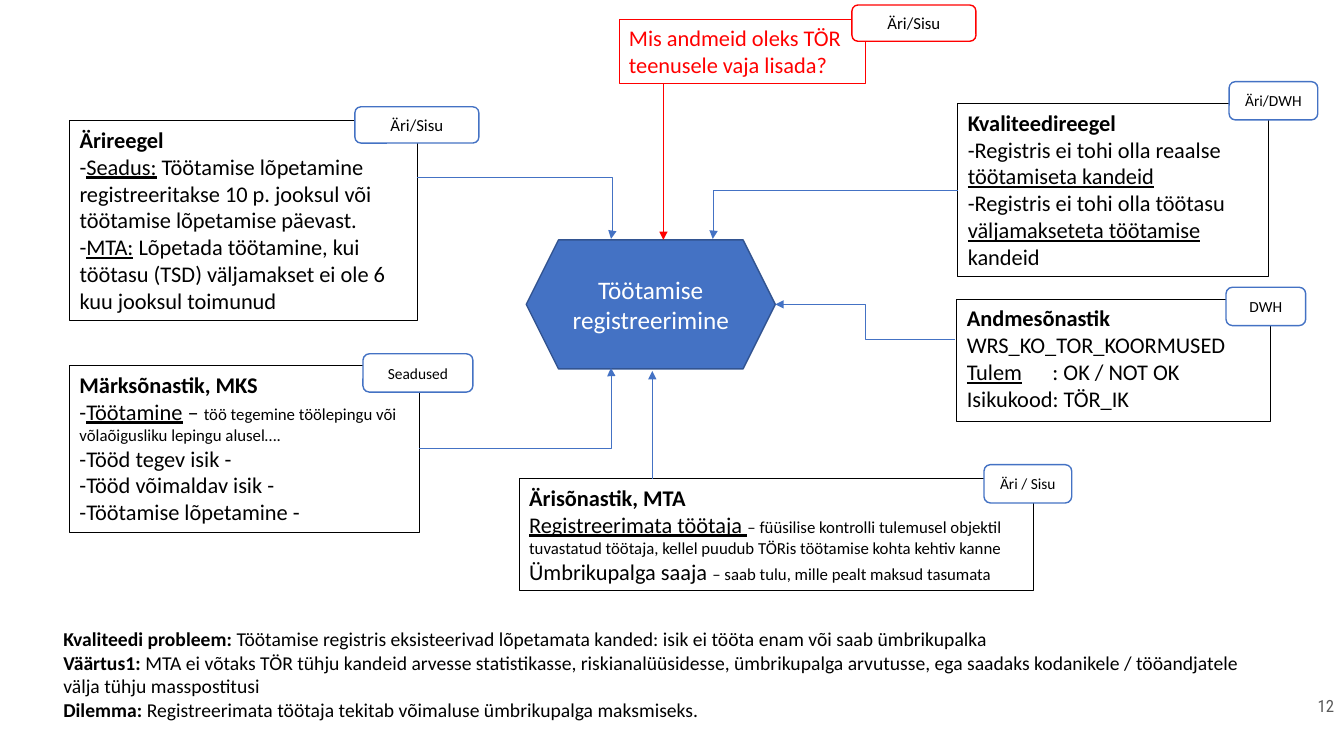
from lxml.etree import SubElement
from pptx import Presentation
from pptx.dml.color import RGBColor
from pptx.enum.shapes import MSO_CONNECTOR as CONNECTOR, MSO_SHAPE as SHAPE
from pptx.enum.text import MSO_ANCHOR as ANCHOR, MSO_AUTO_SIZE as AUTO_SIZE, PP_ALIGN as ALIGN
from pptx.oxml.ns import qn
from pptx.util import Pt

PX = 9144  # 100 px to the inch
COLORS = {name: RGBColor.from_string(value) for name, value in {
    "black": "000000", "white": "FFFFFF", "red": "FF0000",
    "blue": "4472C4", "dark_blue": "325491", "gray": "595959",
}.items()}
TAB_STOP = 85
SMALL = 12

presentation = Presentation()
presentation.slide_width = 1333 * PX
presentation.slide_height = 750 * PX
slide = presentation.slides.add_slide(presentation.slide_layouts[6])


def write(shape, paragraphs, size, color, align=ALIGN.LEFT, font_name="Calibri"):
    """Fill a shape with paragraphs, each a list of (text, style) runs.

    Style letters: b is bold, u is underlined, s is small.
    """
    frame = shape.text_frame
    frame.word_wrap = True
    for index, runs in enumerate(paragraphs):
        paragraph = frame.paragraphs[0] if index == 0 else frame.add_paragraph()
        paragraph.alignment = align
        if any("\t" in text for text, _ in runs):
            tabs = SubElement(paragraph._p.get_or_add_pPr(), qn("a:tabLst"))
            SubElement(tabs, qn("a:tab"), pos=str(TAB_STOP * PX), algn="l")
        paragraph.font.name = font_name
        paragraph.font.size = Pt(size)
        paragraph.font.color.rgb = COLORS[color]
        for text, style in runs:
            run = paragraph.add_run()
            run.text = text
            font = paragraph.font if len(runs) == 1 else run.font
            if "b" in style:
                font.bold = True
            if "u" in style:
                font.underline = True
            if "s" in style:
                font.size = Pt(SMALL)


def add_label(kind, box, text, size, fill, line, color):
    shape = slide.shapes.add_shape(kind, *(value * PX for value in box))
    shape.shadow.inherit = False
    shape.fill.solid()
    shape.fill.fore_color.rgb = COLORS[fill]
    shape.line.color.rgb = COLORS[line]
    shape.line.width = Pt(1)
    shape.text_frame.vertical_anchor = ANCHOR.MIDDLE
    write(shape, [[(text, "")]], size, color, ALIGN.CENTER)


# Text blocks: box, outline, text colour, size, paragraphs
blocks = [
    ((69, 363, 347, 165), "black", "black", 16, [
        [("Märksõnastik, MKS", "b")],
        [("-", ""), ("Töötamine", "u"), (" – ", ""),
         ("töö tegemine töölepingu või võlaõigusliku lepingu alusel….", "s")],
        [("-Tööd tegev isik -", "")],
        [("-Tööd võimaldav isik -", "")],
        [("-Töötamise lõpetamine -", "")],
    ]),
    ((515, 475, 510, 111), "black", "black", 16, [
        [("Ärisõnastik, MTA", "b")],
        [("Registreerimata töötaja ", "u"),
         ("– füüsilise kontrolli tulemusel objektil tuvastatud töötaja, "
          "kellel puudub TÖRis töötamise kohta kehtiv kanne", "s")],
        [("Ümbrikupalga saaja ", ""), ("– saab tulu, mille pealt maksud tasumata", "s")],
    ]),
    ((949, 297, 311, 121), "black", "black", 16, [
        [("Andmesõnastik", "b")],
        [("WRS_KO_TOR_KOORMUSED", "")],
        [("Tulem", "u"), ("\t: OK / NOT OK", "")],
        [("Isikukood: TÖR_IK", "")],
    ]),
    ((69, 120, 345, 198), "black", "black", 16, [
        [("Ärireegel", "b")],
        [("-", ""), ("Seadus:", "u"),
         (" Töötamise lõpetamine registreeritakse 10 p. jooksul või "
          "töötamise lõpetamise päevast.", "")],
        [("-", ""), ("MTA:", "u"),
         (" Lõpetada töötamine, kui töötasu (TSD) väljamakset ei ole 6 "
          "kuu jooksul toimunud", "")],
    ]),
    ((950, 103, 308, 171), "black", "black", 16, [
        [("Kvaliteedireegel", "b")],
        [("-Registris ei tohi olla reaalse ", ""), ("töötamiseta kandeid", "u")],
        [("-Registris ei tohi olla töötasu ", ""), ("väljamakseteta töötamise ", "u"),
         ("kandeid", "")],
    ]),
    ((614, 19, 244, 64), "red", "red", 16, [
        [("Mis andmeid oleks TÖR teenusele vaja lisada?", "")],
    ]),
    ((53, 617, 1214, 104), None, "black", 14, [
        [("Kvaliteedi probleem:", "b"),
         (" Töötamise registris eksisteerivad lõpetamata kanded: isik ei tööta enam "
          "või saab ümbrikupalka", "")],
        [("Väärtus1:", "b"),
         (" MTA ei võtaks TÖR tühju kandeid arvesse statistikasse, riskianalüüsidesse, "
          "ümbrikupalga arvutusse, ega saadaks kodanikele / tööandjatele välja tühju "
          "masspostitusi", "")],
        [("Dilemma:", "b"),
         (" Registreerimata töötaja tekitab võimaluse ümbrikupalga maksmiseks.", "")],
    ]),
]
for box, outline, color, size, paragraphs in blocks:
    block = slide.shapes.add_textbox(*(value * PX for value in box))
    if outline:
        block.line.color.rgb = COLORS[outline]
        block.line.width = Pt(0.75)
    write(block, paragraphs, size, color)
    block.text_frame.auto_size = AUTO_SIZE.SHAPE_TO_FIT_TEXT

add_label(SHAPE.HEXAGON, (522, 238, 247, 128), "Töötamise registreerimine",
          18, "blue", "dark_blue", "white")

# Arrows into the hexagon: start, end, colour, bend position (None is straight)
arrows = [
    ((647, 475), (647, 368), "blue", None),
    ((658, 83), (658, 238), "red", None),
    ((414, 176), (606, 237), "blue", 100600),
    ((950, 189), (707, 237), "blue", 99700),
    ((416, 445), (606, 365), "blue", 100200),
    ((947, 337), (769, 302), "blue", 50000),
]
for start, end, color, bend in arrows:
    kind = CONNECTOR.STRAIGHT if bend is None else CONNECTOR.ELBOW
    arrow = slide.shapes.add_connector(kind, *(value * PX for value in start + end))
    arrow.line.color.rgb = COLORS[color]
    arrow.line.width = Pt(0.5)
    properties = arrow._element.spPr
    SubElement(arrow.line._get_or_add_ln(), qn("a:tailEnd"), type="triangle")
    SubElement(properties, qn("a:effectLst"))
    if bend is not None:
        adjustments = properties.find(qn("a:prstGeom")).find(qn("a:avLst"))
        SubElement(adjustments, qn("a:gd"), name="adj1", fmla=f"val {bend}")

# Owner tags on the corners of the blocks
tags = [
    ((352, 106, 123, 36), "Äri/Sisu", 12, "blue"),
    ((1216, 285, 79, 38), "DWH", 11, "blue"),
    ((976, 461, 87, 38), "Äri / Sisu", 11, "blue"),
    ((360, 351, 109, 38), "Seadused", 11, "blue"),
    ((1219, 81, 88, 38), "Äri/DWH", 11, "blue"),
    ((845, 5, 123, 36), "Äri/Sisu", 12, "red"),
]
for box, text, size, outline in tags:
    add_label(SHAPE.ROUNDED_RECTANGLE, box, text, size, "white", outline, "black")

page_number = slide.shapes.add_textbox(1258 * PX, 683 * PX, 75 * PX, 35 * PX)
page_number.text_frame.vertical_anchor = ANCHOR.MIDDLE
write(page_number, [[("12", "")]], 12, "gray", ALIGN.RIGHT, "Roboto Condensed")

presentation.save("out.pptx")
